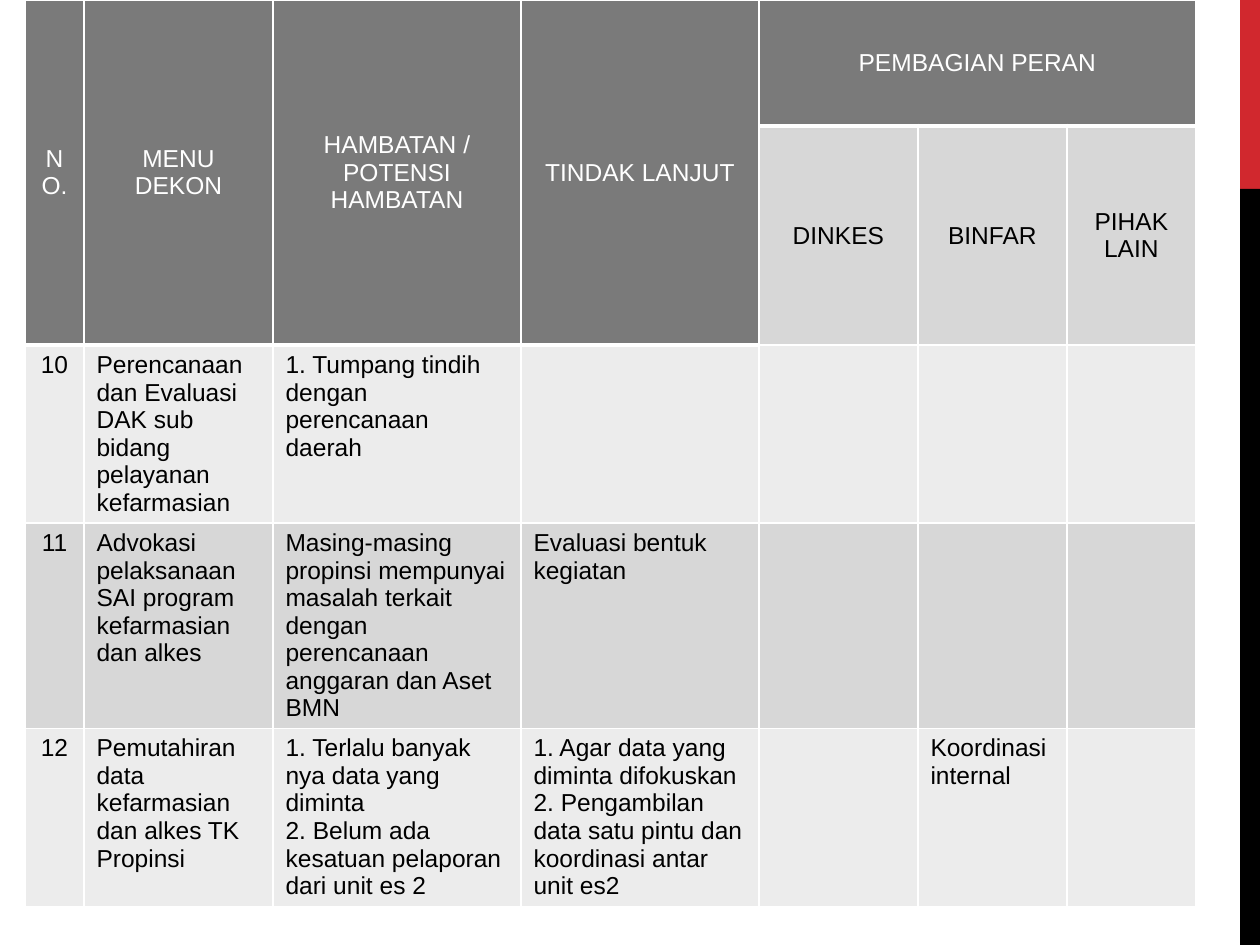
from lxml.etree import SubElement
from pptx import Presentation
from pptx.dml.color import RGBColor
from pptx.enum.shapes import MSO_SHAPE
from pptx.enum.text import MSO_ANCHOR, PP_ALIGN
from pptx.oxml.ns import qn
from pptx.util import Pt

WHITE = RGBColor(0xFF, 0xFF, 0xFF)
BLACK = RGBColor(0, 0, 0)
RED = RGBColor(0xD1, 0x28, 0x2E)
DARK = RGBColor(0x7A, 0x7A, 0x7A)
MIDDLE = RGBColor(0xD7, 0xD7, 0xD7)
LIGHT = RGBColor(0xEC, 0xEC, 0xEC)

ROWS = [
    ["NO.", "MENU DEKON", "HAMBATAN / POTENSI HAMBATAN", "TINDAK LANJUT",
     "PEMBAGIAN PERAN", "", ""],
    ["", "", "", "", "DINKES", "BINFAR", "PIHAK LAIN"],
    ["10", "Perencanaan dan Evaluasi DAK sub bidang pelayanan kefarmasian",
     "1. Tumpang tindih dengan perencanaan daerah", "", "", "", ""],
    ["11", "Advokasi pelaksanaan SAI program kefarmasian dan alkes",
     "Masing-masing propinsi mempunyai masalah terkait dengan "
     "perencanaan anggaran dan Aset BMN",
     "Evaluasi bentuk kegiatan", "", "", ""],
    ["12", "Pemutahiran data kefarmasian dan alkes TK Propinsi",
     "1. Terlalu banyak nya data yang diminta\n"
     "2. Belum ada kesatuan pelaporan dari unit es 2",
     "1. Agar data yang diminta difokuskan\n"
     "2. Pengambilan data satu pintu dan koordinasi antar unit es2",
     "", "Koordinasi internal", ""],
]
ROW_FILLS = [DARK, MIDDLE, LIGHT, MIDDLE, LIGHT]
COLUMN_WIDTHS = [59, 189, 248, 238, 159, 149, 129]
ROW_HEIGHTS = [126, 219, 178, 205, 178]
MERGES = [((0, column), (1, column)) for column in range(4)] + [((0, 4), (0, 6))]
SIDE_BARS = [(0, 189, RED), (189, 756, BLACK)]
HEADER_ROWS = 2


def px(length):
    return round(length * 914400 / 126)


def set_borders(cell, bottom_width):
    properties = cell.fill._xPr
    widths = {"a:lnL": 1, "a:lnR": 1, "a:lnT": 1, "a:lnB": bottom_width}
    for position, (tag, width) in enumerate(widths.items()):
        line = SubElement(properties, qn(tag), w=str(Pt(width)))
        fill = SubElement(line, qn("a:solidFill"))
        SubElement(fill, qn("a:srgbClr"), val=str(WHITE))
        properties.remove(line)
        properties.insert(position, line)


def write_cell(cell, text, centred, color):
    cell.text = text
    for para in cell.text_frame.paragraphs:
        para.alignment = PP_ALIGN.CENTER if centred else PP_ALIGN.LEFT
        for font in [para.font] + [span.font for span in para.runs]:
            for name, value in {"name": "Arial", "size": Pt(14), "bold": False}.items():
                setattr(font, name, value)
            font.color.rgb = color


def add_side_bars(page):
    for top, height, color in SIDE_BARS:
        bar = page.shapes.add_shape(
            MSO_SHAPE.RECTANGLE, px(1240), px(top), px(20), px(height))
        bar.shadow.inherit = False
        bar.fill.solid()
        bar.fill.fore_color.rgb = color
        bar.line.fill.background()


def add_role_table(page):
    table = page.shapes.add_table(
        len(ROWS), len(COLUMN_WIDTHS), px(25), 0,
        px(sum(COLUMN_WIDTHS)), px(sum(ROW_HEIGHTS))).table
    for column, width in zip(table.columns, COLUMN_WIDTHS):
        column.width = px(width)
    for row, height in zip(table.rows, ROW_HEIGHTS):
        row.height = px(height)
    for start, end in MERGES:
        table.cell(*start).merge(table.cell(*end))
    for r, texts in enumerate(ROWS):
        for c, text in enumerate(texts):
            cell = table.cell(r, c)
            header = r < HEADER_ROWS
            fill = DARK if header and c < 4 else ROW_FILLS[r]
            cell.fill.solid()
            cell.fill.fore_color.rgb = fill
            cell.vertical_anchor = MSO_ANCHOR.MIDDLE if header else MSO_ANCHOR.TOP
            write_cell(cell, text, header or c == 0, WHITE if fill == DARK else BLACK)
            set_borders(cell, 3 if r == 0 else 1)


def main():
    deck = Presentation()
    deck.slide_width, deck.slide_height = px(1260), px(945)
    page = deck.slides.add_slide(deck.slide_layouts[6])
    add_side_bars(page)
    add_role_table(page)
    deck.save("out.pptx")


if __name__ == "__main__":
    main()
